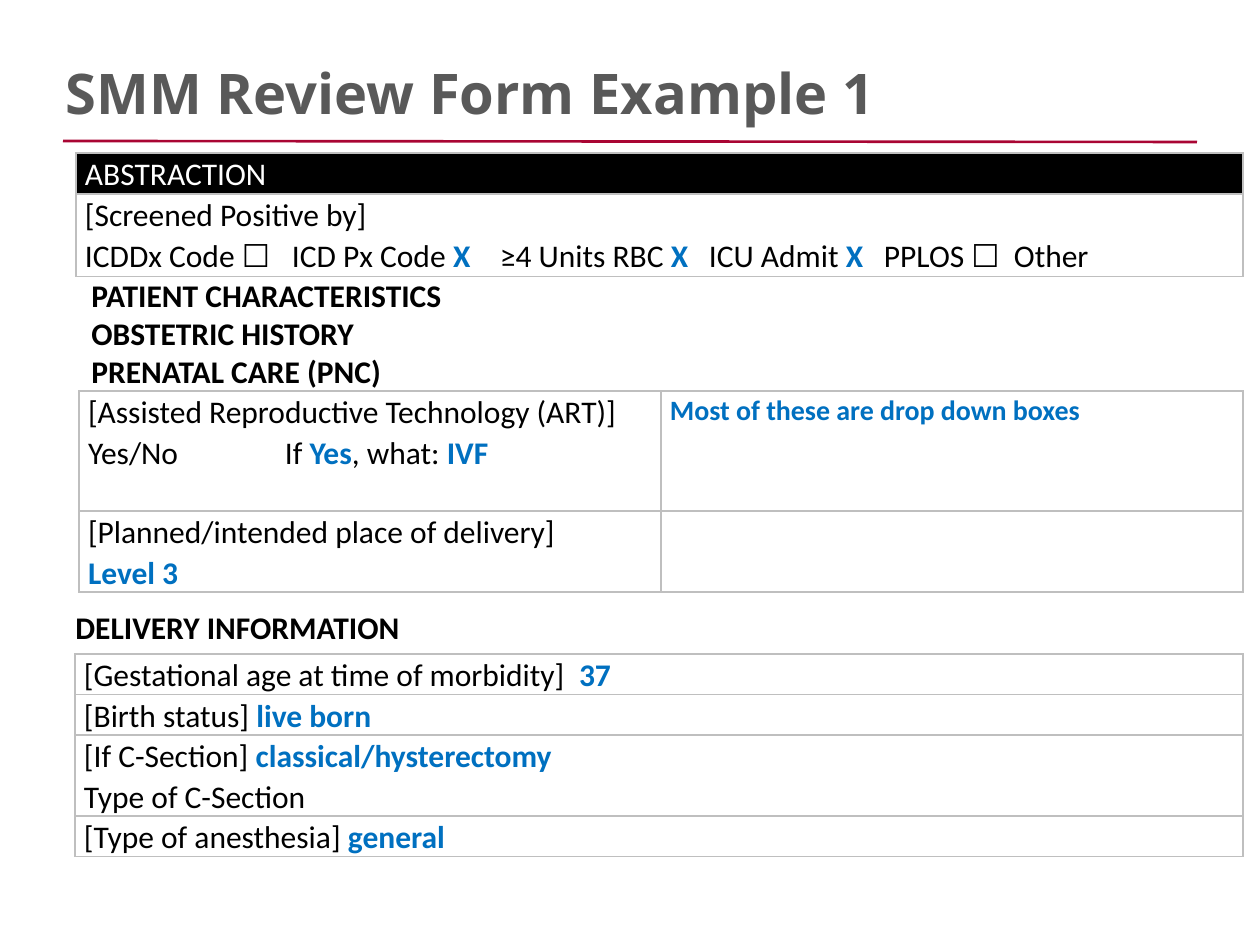
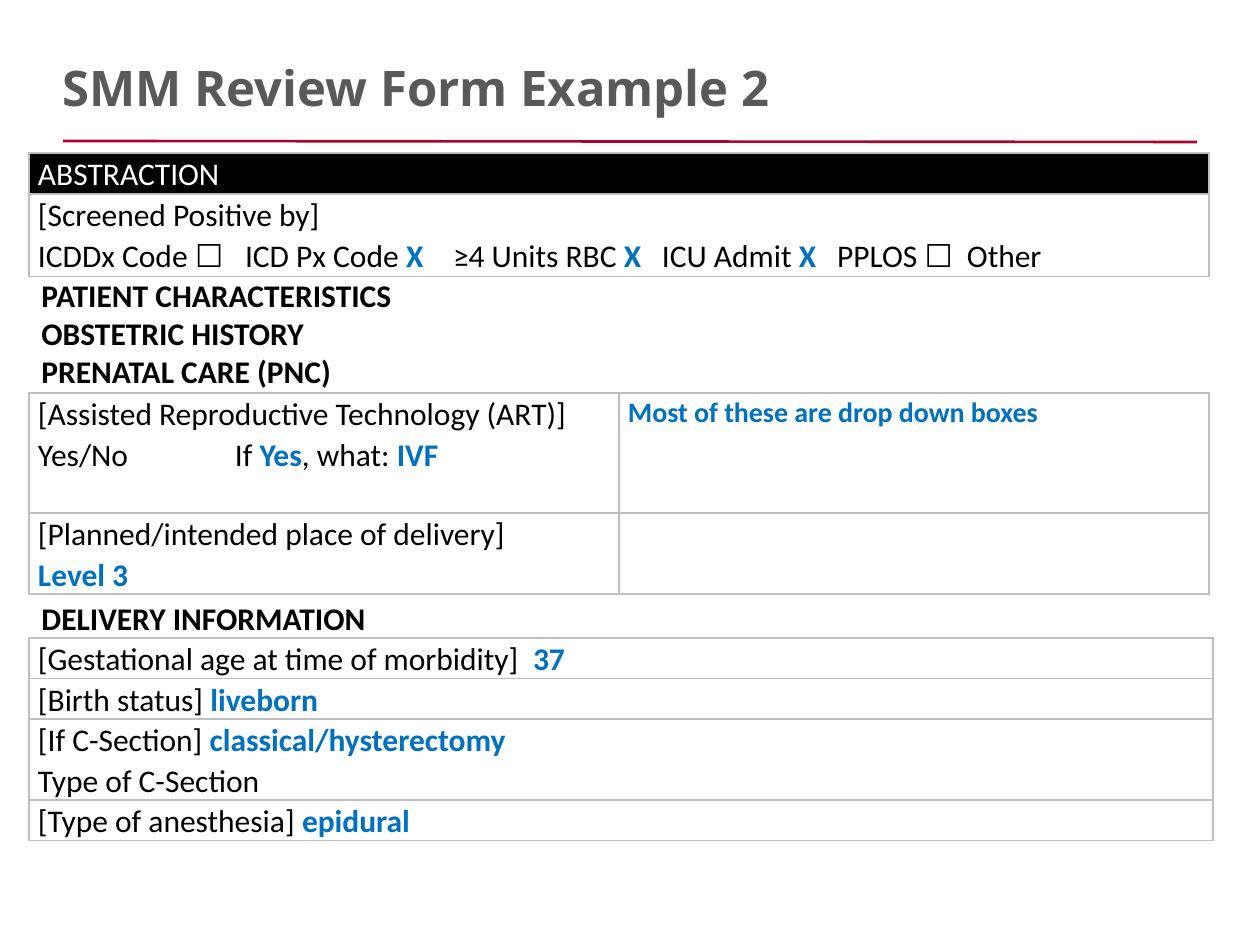
from dataclasses import dataclass

from lxml import etree
from pptx import Presentation
from pptx.dml.color import RGBColor
from pptx.enum.shapes import MSO_CONNECTOR
from pptx.enum.text import MSO_ANCHOR, MSO_AUTO_SIZE, PP_ALIGN
from pptx.oxml.ns import qn
from pptx.util import Emu, Pt

STRAIGHT = MSO_CONNECTOR.STRAIGHT
BOTTOM = MSO_ANCHOR.BOTTOM
LEFT = PP_ALIGN.LEFT
NO_FIT = MSO_AUTO_SIZE.NONE

PX_PER_INCH = 126
SLIDE_WIDTH, SLIDE_HEIGHT = 1260, 945
TITLE_ONLY_LAYOUT = 5
LINE_HEIGHT = 40
CELL_MARGIN = 9


@dataclass(frozen=True)
class Theme:
    title_font: str = "Noto Sans"
    body_font: str = "Calibri"
    title_color: str = "595959"
    rule_color: str = "A90533"
    border_color: str = "BFBFBF"
    text_color: str = "000000"
    answer_color: str = "0070C0"
    header_fill: str = "000000"
    header_text: str = "FFFFFF"
    large_title: int = 32
    small_title: int = 28
    body_size: int = 18
    note_size: int = 16
    rule_width: float = 1.5
    border_width: int = 1
    cell_spacing: float = 1.07


THEME = Theme()


@dataclass(frozen=True)
class Box:
    left: int
    top: int
    width: int
    height: int


@dataclass(frozen=True)
class Cell:
    """Lines of text; parts between asterisks are filled-in answers."""
    lines: tuple[str, ...] = ()
    tabs: tuple[int, ...] = ()
    size: int = THEME.body_size
    color: str = THEME.text_color
    fill: str = ""


@dataclass(frozen=True)
class Grid:
    left: int
    top: int
    width: int


@dataclass(frozen=True)
class FormPage:
    title: str
    title_size: int
    title_box: Box
    abstraction: Grid
    history_box: Box
    prenatal: Grid
    delivery_box: Box
    delivery: Grid
    birth_status: str
    anesthesia: str


# Form content shared by both pages
ABSTRACTION_ROWS = [
    [Cell(("ABSTRACTION",), color=THEME.header_text, fill=THEME.header_fill)],
    [Cell(("[Screened Positive by]",
           "ICDDx Code ☐\tICD Px Code *X*\t≥4 Units RBC *X*\tICU Admit *X*\tPPLOS ☐\tOther"),
          tabs=(207, 415, 624, 799, 929))],
]
HISTORY_HEADINGS = ["PATIENT CHARACTERISTICS", "OBSTETRIC HISTORY", "PRENATAL CARE (PNC)"]
PRENATAL_ROWS = [
    [Cell(("[Assisted Reproductive Technology (ART)]", "Yes/No\tIf *Yes*, what: *IVF*"),
          tabs=(197,)),
     Cell(("*Most of these are drop down boxes*",), size=THEME.note_size)],
    [Cell(("[Planned/intended place of delivery]", "*Level 3*")), Cell()],
]
DELIVERY_HEADINGS = ["DELIVERY INFORMATION"]

# Row heights, counted in lines of text
ABSTRACTION_LINES = (1, 2)
PRENATAL_LINES = (3, 2)
DELIVERY_LINES = (1, 1, 2, 1)

PAGES = [
    FormPage("SMM Review Form Example 1", THEME.large_title, Box(53, 10, 1207, 122),
             Grid(76, 153, 1167), Box(79, 270, 1179, 204), Grid(79, 391, 1164),
             Box(63, 602, 1179, 50), Grid(75, 654, 1168), "live born", "general"),
    FormPage("SMM Review Form Example 2", THEME.small_title, Box(50, 21, 1134, 102),
             Grid(29, 153, 1180), Box(29, 270, 1179, 204), Grid(29, 393, 1180),
             Box(29, 593, 1179, 50), Grid(29, 638, 1184), "liveborn", "epidural"),
]


def px(length: int) -> Emu:
    return Emu(round(length * 914400 / PX_PER_INCH))


def style_span(span, font: str, size: int, color: str, bold: bool) -> None:
    span.font.name = font
    span.font.size = Pt(size)
    span.font.bold = bold
    span.font.color.rgb = RGBColor.from_string(color)


def add_tabs(para, tabs: tuple[int, ...]) -> None:
    tab_list = etree.SubElement(para._p.get_or_add_pPr(), qn("a:tabLst"))
    for stop in tabs:
        etree.SubElement(tab_list, qn("a:tab"), pos=str(px(stop)), algn="l")


def add_borders(table_cell) -> None:
    properties = table_cell._tc.get_or_add_tcPr()
    for side in ("a:lnL", "a:lnR", "a:lnT", "a:lnB"):
        line = etree.SubElement(properties, qn(side), w=str(Pt(THEME.border_width)))
        fill = etree.SubElement(line, qn("a:solidFill"))
        etree.SubElement(fill, qn("a:srgbClr"), val=THEME.border_color)


def fill_cell(table_cell, content: Cell) -> None:
    table_cell.margin_left = table_cell.margin_right = px(CELL_MARGIN)
    table_cell.margin_top = table_cell.margin_bottom = 0
    add_borders(table_cell)
    if content.fill:
        table_cell.fill.solid()
        table_cell.fill.fore_color.rgb = RGBColor.from_string(content.fill)
    else:
        table_cell.fill.background()
    frame = table_cell.text_frame
    for index, line in enumerate(content.lines):
        para = frame.add_paragraph() if index else frame.paragraphs[0]
        para.line_spacing = THEME.cell_spacing
        if "\t" in line:
            add_tabs(para, content.tabs)
        for part, words in enumerate(line.split("*")):
            if words:
                answer = part % 2 == 1
                span = para.add_run()
                span.text = words
                style_span(span, THEME.body_font, content.size,
                           THEME.answer_color if answer else content.color, answer)


def draw_table(page, grid: Grid, rows: list[list[Cell]], line_counts: tuple[int, ...]) -> None:
    columns = len(rows[0])
    table = page.shapes.add_table(len(rows), columns, px(grid.left), px(grid.top),
                                  px(grid.width), px(LINE_HEIGHT * sum(line_counts))).table
    table.first_row = False
    table.horz_banding = False
    for column in table.columns:
        column.width = px(grid.width // columns)
    for row, count, contents in zip(table.rows, line_counts, rows):
        row.height = px(LINE_HEIGHT * count)
        for table_cell, content in zip(row.cells, contents):
            fill_cell(table_cell, content)


def draw_title(page, form: FormPage) -> None:
    title, box = page.shapes.title, form.title_box
    title.left, title.top = px(box.left), px(box.top)
    title.width, title.height = px(box.width), px(box.height)
    frame = title.text_frame
    frame.text = form.title
    frame.auto_size = NO_FIT
    frame.vertical_anchor = BOTTOM
    para = frame.paragraphs[0]
    para.alignment = LEFT
    style_span(para.runs[0], THEME.title_font, form.title_size, THEME.title_color, True)


def draw_rule(page) -> None:
    rule = page.shapes.add_connector(STRAIGHT, px(63), px(141), px(1197), px(142))
    rule.line.color.rgb = RGBColor.from_string(THEME.rule_color)
    rule.line.width = Pt(THEME.rule_width)
    etree.SubElement(rule._element.spPr, qn("a:effectLst"))


def draw_headings(page, box: Box, headings: list[str]) -> None:
    frame = page.shapes.add_textbox(px(box.left), px(box.top),
                                    px(box.width), px(box.height)).text_frame
    frame.word_wrap = True
    frame.text = "\n".join(headings)
    for para in frame.paragraphs:
        style_span(para.runs[0], THEME.body_font, THEME.body_size, THEME.text_color, True)


def delivery_rows(form: FormPage) -> list[list[Cell]]:
    return [
        [Cell(("[Gestational age at time of morbidity]\t*37*",), tabs=(495,))],
        [Cell((f"[Birth status] *{form.birth_status}*",))],
        [Cell(("[If C-Section] *classical/hysterectomy*", "Type of C-Section"))],
        [Cell((f"[Type of anesthesia] *{form.anesthesia}*",))],
    ]


def draw_page(deck, form: FormPage) -> None:
    page = deck.slides.add_slide(deck.slide_layouts[TITLE_ONLY_LAYOUT])
    draw_rule(page)
    draw_title(page, form)
    draw_table(page, form.abstraction, ABSTRACTION_ROWS, ABSTRACTION_LINES)
    draw_headings(page, form.history_box, HISTORY_HEADINGS)
    draw_table(page, form.prenatal, PRENATAL_ROWS, PRENATAL_LINES)
    draw_headings(page, form.delivery_box, DELIVERY_HEADINGS)
    draw_table(page, form.delivery, delivery_rows(form), DELIVERY_LINES)


def main() -> None:
    deck = Presentation()
    deck.slide_width, deck.slide_height = px(SLIDE_WIDTH), px(SLIDE_HEIGHT)
    for form in PAGES:
        draw_page(deck, form)
    deck.save("out.pptx")


if __name__ == "__main__":
    main()
